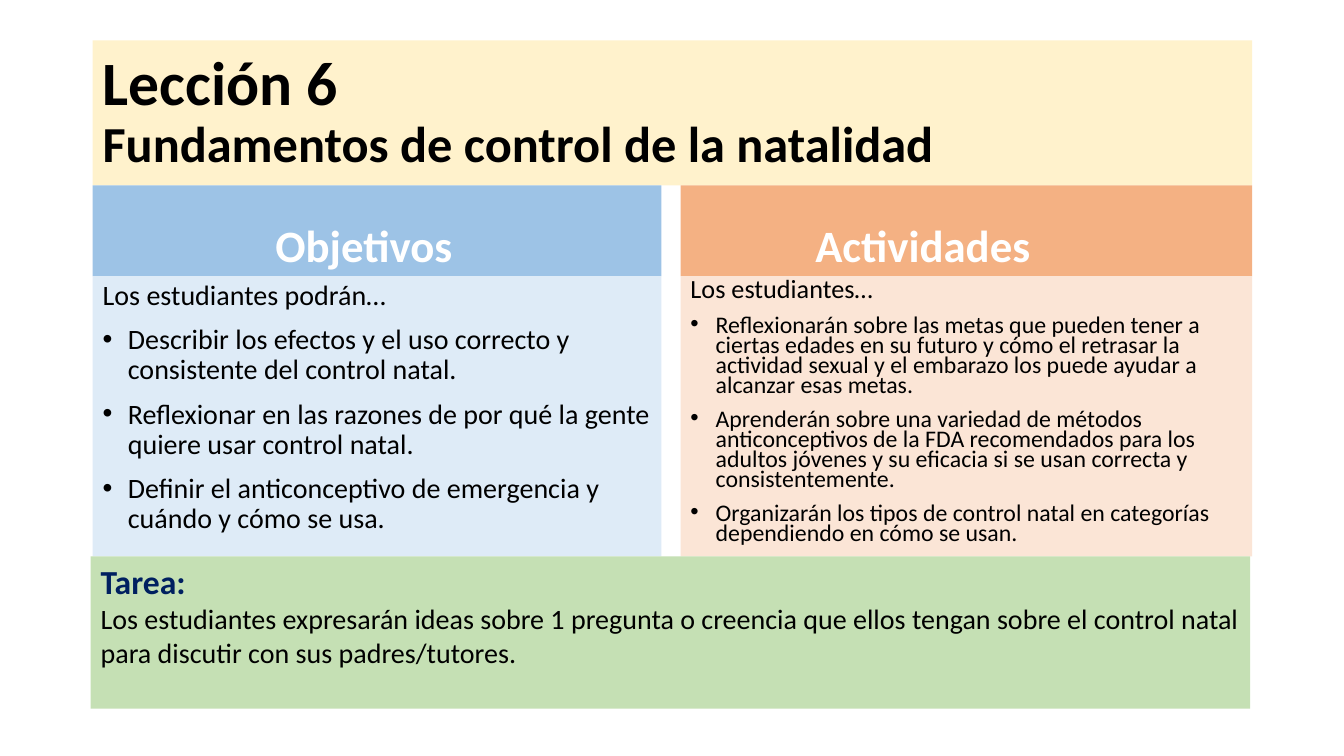
"""Build the Lección 6 overview slide: title, goals, activities and homework."""
from lxml.etree import SubElement
from pptx import Presentation
from pptx.dml.color import RGBColor
from pptx.enum.text import MSO_ANCHOR, PP_ALIGN
from pptx.oxml.ns import qn
from pptx.util import Inches, Pt

COLORS = {
    "title": "FFF2CC", "homework": "C5E0B4", "navy": "002060",
    "black": "000000", "white": "FFFFFF",
    "goals_header": "9DC3E6", "goals_body": "DEEBF7",
    "activities_header": "F4B183", "activities_body": "FBE5D6",
}
LEFT, RIGHT = 0.92, 12.42
TITLE_TOP, HEADER_TOP, BODY_TOP, HOMEWORK_TOP, BOTTOM = 0.4, 1.84, 2.74, 5.52, 7.03
INDENT = Inches(0.25)


def add_panel(left, top, right, bottom, fill, text, anchor=MSO_ANCHOR.TOP):
    panel = slide.shapes.add_textbox(
        Inches(left), Inches(top), Inches(right - left), Inches(bottom - top))
    panel.fill.solid()
    panel.fill.fore_color.rgb = RGBColor.from_string(COLORS[fill])
    frame = panel.text_frame
    frame.word_wrap = True
    frame.vertical_anchor = anchor
    frame.text = text
    return frame


def style_run(run, size, color="black", bold=False):
    run.font.name = "Calibri"
    run.font.size = Pt(size)
    run.font.bold = bold
    run.font.color.rgb = RGBColor.from_string(COLORS[color])


prs = Presentation()
prs.slide_width, prs.slide_height = Inches(13.33), Inches(7.5)
slide = prs.slides.add_slide(prs.slide_layouts[6])

title = add_panel(LEFT, TITLE_TOP, RIGHT, HEADER_TOP, "title",
                  "Lección 6\vFundamentos de control de la natalidad", MSO_ANCHOR.MIDDLE)
title.paragraphs[0].line_spacing = 0.9
for run, size in zip(title.paragraphs[0].runs, (44, 36)):
    style_run(run, size, bold=True)

columns = [
    ("goals", LEFT, 6.56, "Objetivos", 0.36, 0.9, 20, 20, [
        "Los estudiantes podrán…",
        "Describir los efectos y el uso correcto y consistente del control natal.",
        "Reflexionar en las razones de por qué la gente quiere usar control natal.",
        "Definir el anticonceptivo de emergencia y cuándo y cómo se usa.",
    ]),
    ("activities", 6.75, RIGHT, "Actividades", 0.96, 0.7, 18.7, 17, [
        "Los estudiantes…",
        "Reflexionarán sobre las metas que pueden tener a ciertas edades en su futuro y "
        "cómo el retrasar la actividad sexual y el embarazo los puede ayudar a alcanzar esas metas.",
        "Aprenderán sobre una variedad de métodos anticonceptivos de la FDA recomendados para "
        "los adultos jóvenes y su eficacia si se usan correcta y consistentemente.",
        "Organizarán los tipos de control natal en categorías dependiendo en cómo se usan.",
    ]),
]
for topic, left, right, heading, heading_inset, spacing, intro_size, item_size, lines in columns:
    header = add_panel(left, HEADER_TOP, right, BODY_TOP, f"{topic}_header",
                       heading, MSO_ANCHOR.BOTTOM)
    header.margin_right = Inches(heading_inset)
    header.margin_bottom = Inches(0.05)
    header.paragraphs[0].alignment = PP_ALIGN.CENTER
    style_run(header.paragraphs[0].runs[0], 32, "white", True)

    body = add_panel(left, BODY_TOP, right, HOMEWORK_TOP, f"{topic}_body", "\n".join(lines))
    for index, line in enumerate(body.paragraphs):
        line.line_spacing = spacing
        line.space_before = Pt(10)
        style_run(line.runs[0], item_size if index else intro_size)
        if index:
            properties = line._p.get_or_add_pPr()
            properties.set("marL", str(INDENT))
            properties.set("indent", str(-INDENT))
            SubElement(properties, qn("a:buFont")).set("typeface", "Arial")
            SubElement(properties, qn("a:buChar")).set("char", "•")

homework = add_panel(
    0.9, HOMEWORK_TOP, 12.4, BOTTOM, "homework",
    "Tarea:\nLos estudiantes expresarán ideas sobre 1 pregunta o creencia que ellos tengan "
    "sobre el control natal para discutir con sus padres/tutores.")
style_run(homework.paragraphs[0].runs[0], 24, "navy", True)
style_run(homework.paragraphs[1].runs[0], 20)

prs.save("out.pptx")
